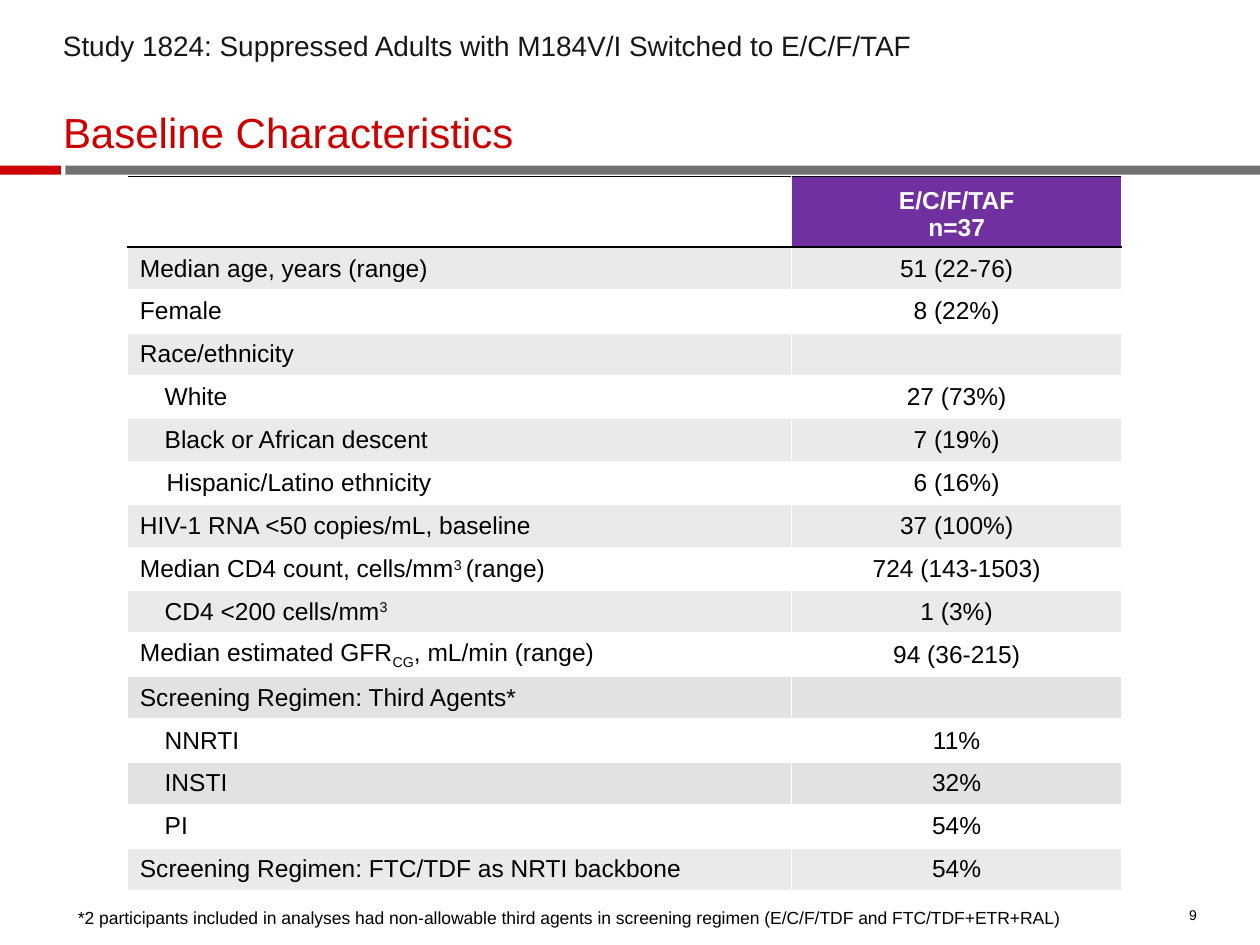
from dataclasses import dataclass
from typing import Optional

from lxml import etree
from pptx import Presentation
from pptx.dml.color import RGBColor
from pptx.enum import shapes, text
from pptx.oxml import ns
from pptx.util import Cm, Pt


@dataclass(frozen=True)
class Theme:
    font: str = "Arial"
    red: str = "CC0000"
    grey: str = "717171"
    purple: str = "7030A0"
    black: str = "000000"
    heading: str = "171717"
    white: str = "FFFFFF"
    band: str = "EAEAEA"
    dark_band: str = "E2E2E2"
    title_size: int = 24
    study_size: int = 16
    table_size: int = 14
    note_size: int = 10
    number_size: int = 8


@dataclass(frozen=True)
class Span:
    words: str
    baseline: int = 0


@dataclass(frozen=True)
class Characteristic:
    label: tuple[Span, ...]
    value: str = ""
    indent: float = 0
    fill: Optional[str] = None


@dataclass(frozen=True)
class Box:
    left: float
    top: float
    width: float
    height: float

    def lengths(self) -> tuple:
        return tuple(Cm(n) for n in (self.left, self.top, self.width, self.height))


THEME = Theme()
SUB_INDENT = 0.5
CELL_MARGIN = 0.25
HEADER_HEIGHT = 1.42
TABLE = Box(2.57, 3.56, 20.04, 14.4)
COLUMN_WIDTHS = (13.39, 6.65)


def row(label: str, value: str = "", indent: float = 0, fill: Optional[str] = None):
    return Characteristic((Span(label),), value, indent, fill)


BASELINE = [
    row("Median age, years (range)", "51 (22-76)", fill=THEME.band),
    row("Female", "8 (22%)"),
    row("Race/ethnicity", fill=THEME.band),
    row("White", "27 (73%)", SUB_INDENT),
    row("Black or African descent", "7 (19%)", SUB_INDENT, THEME.band),
    row("Hispanic/Latino ethnicity", "6 (16%)", SUB_INDENT + 0.04),
    row("HIV-1 RNA <50 copies/mL, baseline", "37 (100%)", fill=THEME.band),
    Characteristic((Span("Median CD4 count, cells/mm"), Span("3 ", 30), Span("(range)")),
                   "724 (143-1503)"),
    Characteristic((Span("CD4 <200 cells/mm"), Span("3", 30)), "1 (3%)",
                   SUB_INDENT, THEME.band),
    Characteristic((Span("Median estimated GFR"), Span("CG", -25),
                    Span(", mL/min (range)")), "94 (36-215)"),
    row("Screening Regimen: Third Agents*", fill=THEME.dark_band),
    row("NNRTI", "11%", SUB_INDENT),
    row("INSTI", "32%", SUB_INDENT, THEME.dark_band),
    row("PI", "54%", SUB_INDENT),
    row("Screening Regimen: FTC/TDF as NRTI backbone", "54%", fill=THEME.band),
]


def apply(target, formats: dict) -> None:
    for name, setting in formats.items():
        setattr(target, name, setting)


def write(paragraph, spans, size: int, color: str, bold: bool = False, **formats) -> None:
    apply(paragraph, formats)
    for span in spans:
        run = paragraph.add_run()
        run.text = span.words
        apply(run.font, {"name": THEME.font, "size": Pt(size), "bold": bold})
        run.font.color.rgb = RGBColor.from_string(color)
        if span.baseline:
            run.font._element.set("baseline", str(span.baseline * 1000))


def set_frame(frame, anchor, margins=(0, 0, 0, 0)) -> None:
    sides = ("margin_left", "margin_top", "margin_right", "margin_bottom")
    apply(frame, {"word_wrap": True, "vertical_anchor": anchor,
                  "auto_size": text.MSO_AUTO_SIZE.NONE,
                  **{side: Cm(m) for side, m in zip(sides, margins)}})


def add_bar(slide, box: Box, color: str) -> None:
    bar = slide.shapes.add_shape(shapes.MSO_SHAPE.RECTANGLE, *box.lengths())
    bar.shadow.inherit = False
    bar.fill.solid()
    bar.fill.fore_color.rgb = RGBColor.from_string(color)
    bar.line.fill.background()


def add_text(slide, box: Box, words: str, size: int, color: str,
             anchor=text.MSO_ANCHOR.TOP, margins=(0, 0, 0, 0), **formats) -> None:
    frame = slide.shapes.add_textbox(*box.lengths()).text_frame
    set_frame(frame, anchor, margins)
    write(frame.paragraphs[0], [Span(words)], size, color, **formats)


def set_borders(cell, top: str, bottom: str) -> None:
    properties = cell._tc.get_or_add_tcPr()
    edges = {"lnL": THEME.white, "lnR": THEME.white, "lnT": top, "lnB": bottom}
    for place, (edge, color) in enumerate(edges.items()):
        line = etree.Element(ns.qn(f"a:{edge}"), w=str(Pt(1)))
        fill = etree.SubElement(line, ns.qn("a:solidFill"))
        etree.SubElement(fill, ns.qn("a:srgbClr"), val=color)
        properties.insert(place, line)


def fill_cell(cell, lines, fill: Optional[str], color: str = THEME.black,
              indent: float = 0, anchor=text.MSO_ANCHOR.MIDDLE,
              align=text.PP_ALIGN.LEFT, bold: bool = False) -> None:
    apply(cell, {"vertical_anchor": anchor, "margin_left": Cm(CELL_MARGIN + indent),
                 "margin_right": Cm(CELL_MARGIN),
                 "margin_top": Cm(0.1), "margin_bottom": Cm(0.1)})
    if fill:
        cell.fill.solid()
        cell.fill.fore_color.rgb = RGBColor.from_string(fill)
    else:
        cell.fill.background()
    frame = cell.text_frame
    for number, spans in enumerate(lines):
        paragraph = frame.add_paragraph() if number else frame.paragraphs[0]
        write(paragraph, spans, THEME.table_size, color, bold, alignment=align)
    if not lines:  # keeps an empty cell from stretching its row
        end = frame.paragraphs[0]._p.get_or_add_endParaRPr()
        end.set("sz", str(THEME.table_size * 100))


def add_baseline_table(slide) -> None:
    table = slide.shapes.add_table(len(BASELINE) + 1, 2, *TABLE.lengths()).table
    apply(table, {"first_row": False, "horz_banding": False})
    for column, width in zip(table.columns, COLUMN_WIDTHS):
        column.width = Cm(width)
    for line in table.rows:
        line.height = Cm((TABLE.height - HEADER_HEIGHT) / len(BASELINE))
    table.rows[0].height = Cm(HEADER_HEIGHT)

    # Header
    fill_cell(table.cell(0, 0), [], None)
    fill_cell(table.cell(0, 1), [[Span("E/C/F/TAF")], [Span("n=37")]], THEME.purple,
              THEME.white, anchor=text.MSO_ANCHOR.BOTTOM,
              align=text.PP_ALIGN.CENTER, bold=True)

    # Characteristics
    for number, item in enumerate(BASELINE, 1):
        fill_cell(table.cell(number, 0), [item.label], item.fill, indent=item.indent)
        fill_cell(table.cell(number, 1), [[Span(item.value)]] if item.value else [],
                  item.fill, align=text.PP_ALIGN.CENTER)

    for number in range(len(BASELINE) + 1):
        for column in range(2):
            set_borders(table.cell(number, column),
                        THEME.black if number <= 1 else THEME.white,
                        THEME.black if number == 0 else THEME.white)


def main() -> None:
    deck = Presentation()
    apply(deck, {"slide_width": Cm(25.4), "slide_height": Cm(19.05)})
    slide = deck.slides.add_slide(deck.slide_layouts[5])

    # Divider under the title
    add_bar(slide, Box(1.32, 3.34, 24.08, 0.18), THEME.grey)
    add_bar(slide, Box(0, 3.34, 1.23, 0.18), THEME.red)

    # Title and study name
    title = slide.shapes.title
    apply(title, dict(zip(("left", "top", "width", "height"),
                          Box(1.27, 1.3, 22.86, 1.88).lengths())))
    set_frame(title.text_frame, text.MSO_ANCHOR.BOTTOM)
    write(title.text_frame.paragraphs[0], [Span("Baseline Characteristics")],
          THEME.title_size, THEME.red, alignment=text.PP_ALIGN.LEFT, line_spacing=0.9)
    add_text(slide, Box(1.02, 0.53, 22.86, 0.84),
             "Study 1824: Suppressed Adults with M184V/I Switched to E/C/F/TAF",
             THEME.study_size, THEME.heading,
             margins=(0.25, 0.13, 0.25, 0.13), line_spacing=0.9)

    add_baseline_table(slide)

    # Footnote and slide number
    add_text(slide, Box(1.57, 18.34, 21.46, 0.38),
             "*2 participants included in analyses had non-allowable third agents in "
             "screening regimen (E/C/F/TDF and FTC/TDF+ETR+RAL)",
             THEME.note_size, THEME.black, line_spacing=0.9)
    add_text(slide, Box(23.44, 18.16, 0.69, 0.46), "9", THEME.number_size, THEME.black,
             anchor=text.MSO_ANCHOR.BOTTOM, alignment=text.PP_ALIGN.RIGHT)

    deck.save("out.pptx")


if __name__ == "__main__":
    main()
